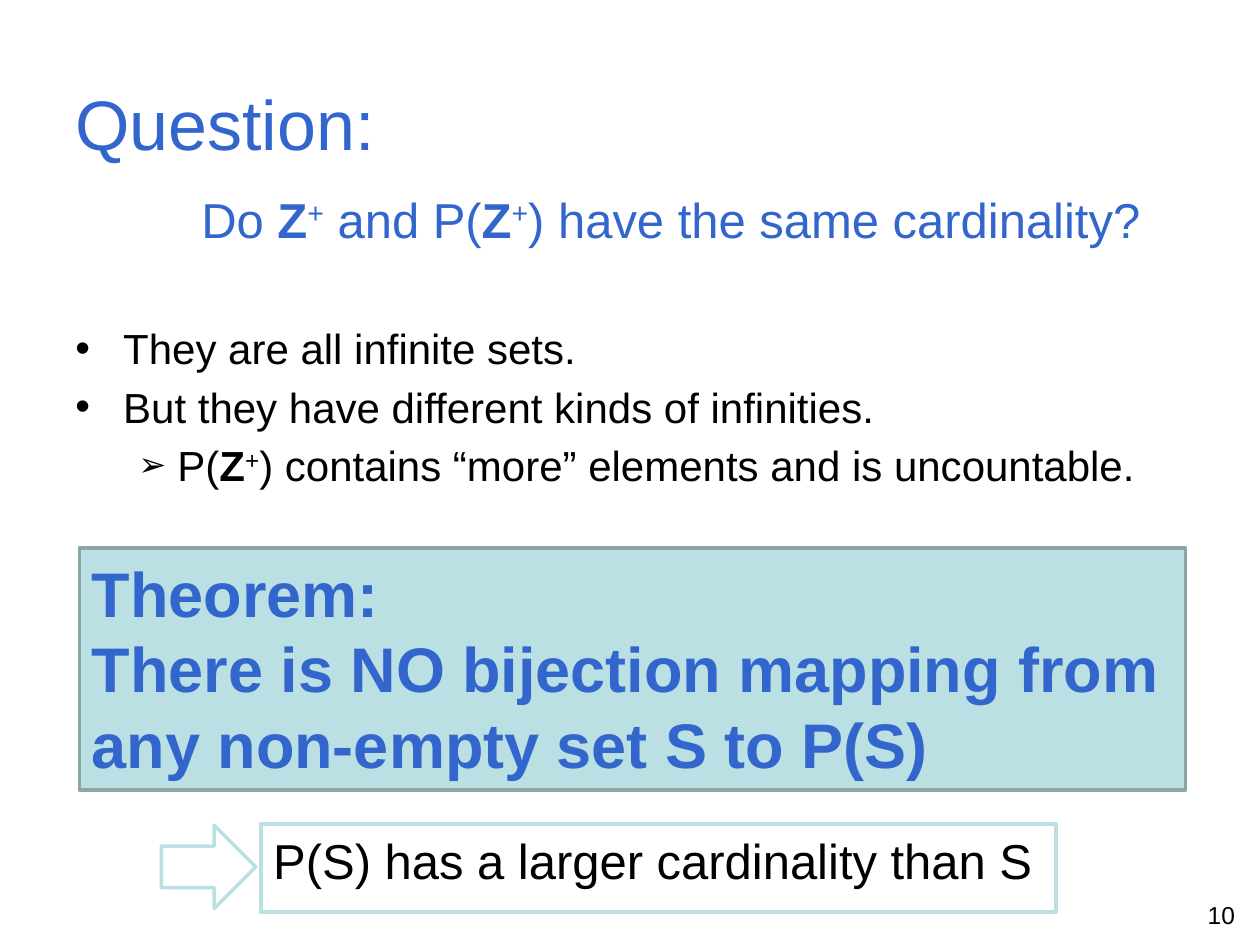
from dataclasses import dataclass

from lxml import etree
from pptx import Presentation
from pptx.dml.color import RGBColor
from pptx.enum.shapes import MSO_SHAPE
from pptx.enum.text import MSO_ANCHOR, PP_ALIGN
from pptx.oxml.ns import qn
from pptx.util import Inches, Pt

BLACK = RGBColor(0x00, 0x00, 0x00)
WHITE = RGBColor(0xFF, 0xFF, 0xFF)
BLUE = RGBColor(0x33, 0x66, 0xCC)
TEAL = RGBColor(0xBB, 0xE0, 0xE3)
DARK_TEAL = RGBColor(0x8A, 0xA6, 0xA8)

RECTANGLE = MSO_SHAPE.RECTANGLE
RIGHT_ARROW = MSO_SHAPE.RIGHT_ARROW
TOP = MSO_ANCHOR.TOP
MIDDLE = MSO_ANCHOR.MIDDLE
LEFT = PP_ALIGN.LEFT
RIGHT = PP_ALIGN.RIGHT

POSITIVE_INTEGERS = "Z+"


@dataclass(frozen=True)
class Box:
    left: float
    top: float
    width: float
    height: float

    def lengths(self) -> tuple:
        return tuple(map(Inches, (self.left, self.top, self.width, self.height)))


@dataclass(frozen=True)
class Line:
    """One paragraph; each POSITIVE_INTEGERS in its text is set as a symbol."""
    text: str
    size: int
    color: RGBColor = BLACK
    bold: bool = False
    align: PP_ALIGN = LEFT
    margin: float = 0
    hanging: float = 0
    bullet: str = ""
    bullet_percent: int = 100
    space_before: float = 0
    space_after: float = 0


def add_runs(paragraph, line: Line) -> None:
    for index, part in enumerate(line.text.split(POSITIVE_INTEGERS)):
        if index:
            symbol = paragraph.add_run()
            symbol.text = "Z"
            symbol.font.bold = True
            plus = paragraph.add_run()
            plus.text = "+"
            plus._r.get_or_add_rPr().set("baseline", "30000")
        if part:
            paragraph.add_run().text = part


def set_indent(paragraph, line: Line) -> None:
    properties = paragraph._p.get_or_add_pPr()
    properties.set("marL", str(Inches(line.margin)))
    properties.set("indent", str(-Inches(line.hanging)))
    if line.bullet:
        size = etree.Element(qn("a:buSzPct"), val=str(line.bullet_percent * 1000))
        font = etree.Element(qn("a:buFont"), typeface="Arial")
        character = etree.Element(qn("a:buChar"), char=line.bullet)
        position = len(properties.findall(qn("a:spcBef")) + properties.findall(qn("a:spcAft")))
        for offset, element in enumerate((size, font, character)):
            properties.insert(position + offset, element)


def write_lines(shape, lines: list[Line], anchor: MSO_ANCHOR = TOP) -> None:
    frame = shape.text_frame
    frame.word_wrap = True
    frame.vertical_anchor = anchor
    for index, line in enumerate(lines):
        paragraph = frame.add_paragraph() if index else frame.paragraphs[0]
        add_runs(paragraph, line)
        paragraph.alignment = line.align
        paragraph.space_before = Pt(line.space_before)
        paragraph.space_after = Pt(line.space_after)
        set_indent(paragraph, line)
        font = paragraph.font
        font.name = "Arial"
        font.size = Pt(line.size)
        font.bold = line.bold
        font.color.rgb = line.color


def add_text(slide, box: Box, lines: list[Line], anchor: MSO_ANCHOR = TOP) -> None:
    write_lines(slide.shapes.add_textbox(*box.lengths()), lines, anchor)


def add_outlined(slide, kind: MSO_SHAPE, box: Box, fill: RGBColor, outline: RGBColor):
    shape = slide.shapes.add_shape(kind, *box.lengths())
    shape.shadow.inherit = False
    shape.fill.solid()
    shape.fill.fore_color.rgb = fill
    shape.line.color.rgb = outline
    shape.line.width = Pt(2)
    return shape


def main() -> None:
    presentation = Presentation()
    presentation.slide_width = Inches(10)
    presentation.slide_height = Inches(7.5)
    slide = presentation.slides.add_slide(presentation.slide_layouts[6])

    add_text(slide, Box(7.57, 7.09, 2.33, 0.31), [Line("10", 14, align=RIGHT)])
    add_text(slide, Box(0.5, 0.68, 9, 1.25), [
        Line("Question:", 40, BLUE),
        Line("Do Z+ and P(Z+) have the same cardinality?", 28, BLUE,
             margin=1, space_before=14),
    ], MIDDLE)

    point = {"size": 24, "margin": 0.38, "hanging": 0.38, "bullet": "•", "space_after": 4.8}
    subpoint = point | {"margin": 0.81, "hanging": 0.31, "bullet": "➢", "bullet_percent": 80}
    add_text(slide, Box(0.5, 2.51, 9, 1.56), [
        Line("They are all infinite sets.", **point),
        Line("But they have different kinds of infinities.", **point),
        Line("P(Z+) contains “more” elements and is uncountable.", **subpoint),
    ])

    theorem = add_outlined(slide, RECTANGLE, Box(0.63, 4.35, 8.78, 1.92), TEAL, DARK_TEAL)
    write_lines(theorem, [
        Line("Theorem:", 36, BLUE, bold=True),
        Line("There is NO bijection mapping from any non-empty set S to P(S)",
             36, BLUE, bold=True),
    ])

    add_outlined(slide, RIGHT_ARROW, Box(1.28, 6.55, 0.75, 0.66), WHITE, TEAL)
    conclusion = add_outlined(slide, RECTANGLE, Box(2.07, 6.54, 6.31, 0.7), WHITE, TEAL)
    write_lines(conclusion, [Line("P(S) has a larger cardinality than S", 28)])

    presentation.save("out.pptx")


if __name__ == "__main__":
    main()
